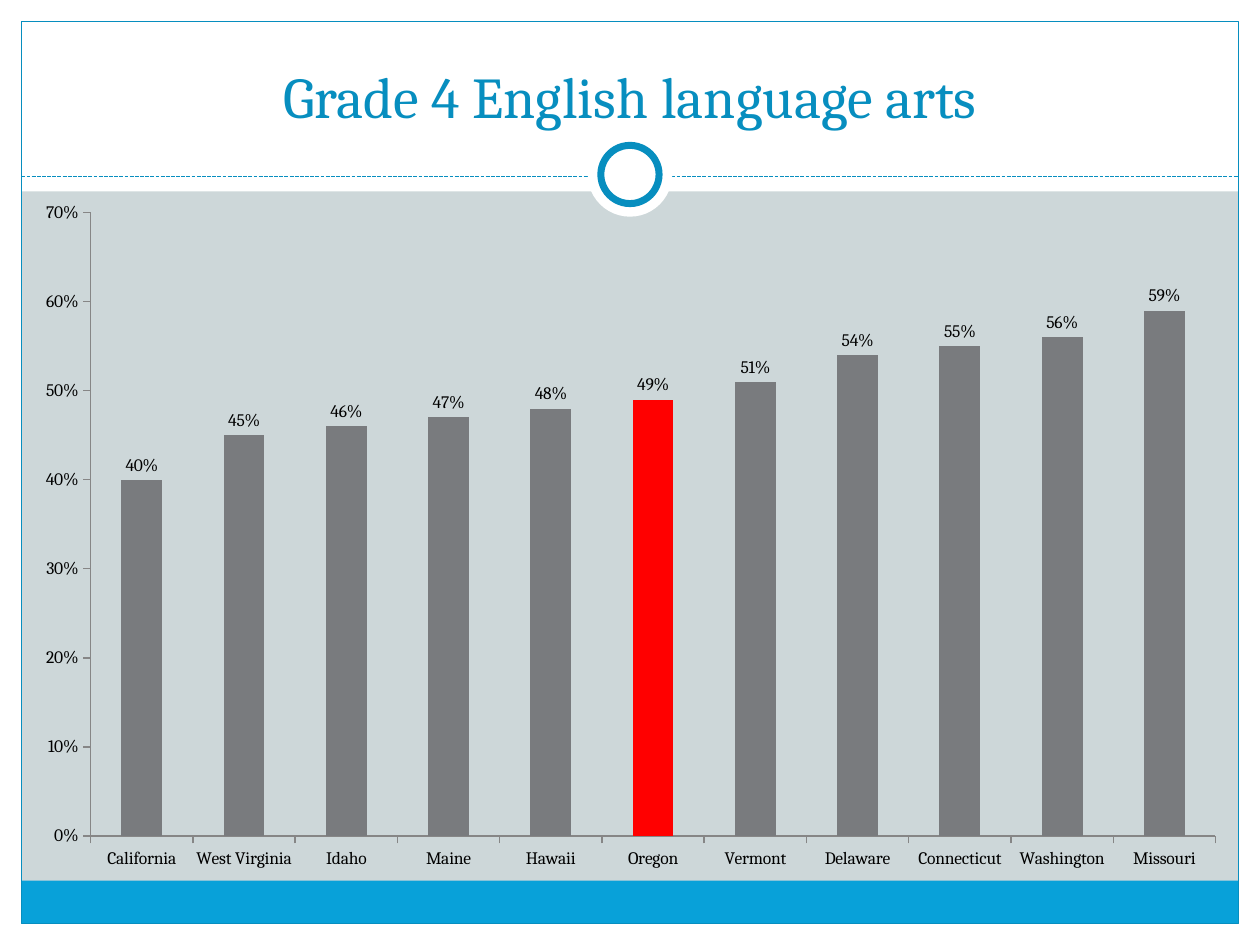
from lxml import etree
from pptx import Presentation
from pptx import util as u
from pptx.chart.data import CategoryChartData
from pptx.dml.color import RGBColor
from pptx.enum import chart as ch, dml, shapes, text
from pptx.oxml.ns import qn

COLORS = {"paper": "CDD7D9", "white": "FFFFFF", "band": "08A1D9", "accent": "078EBF",
          "bar": "797B7E", "focus": "FF0000", "ink": "000000", "axis": "868686"}
FONT = "Cambria"
W, H = u.Inches(10), u.Inches(7.5)
MARGIN = u.Inches(0.17)
HEADER = u.Inches(1.52)
RULE_Y = u.Inches(1.4)
SCORES = {"California": 0.40, "West Virginia": 0.45, "Idaho": 0.46, "Maine": 0.47,
          "Hawaii": 0.48, "Oregon": 0.49, "Vermont": 0.51, "Delaware": 0.54,
          "Connecticut": 0.55, "Washington": 0.56, "Missouri": 0.59}


def rgb(name):
    """Return the named colour."""
    return RGBColor.from_string(COLORS[name])


def set_font(font, size, color):
    """Apply the slide's typeface with a size and colour."""
    for key, value in {"name": FONT, "size": u.Pt(size), "bold": False}.items():
        setattr(font, key, value)
    font.color.rgb = rgb(color)


def add_shape(s, kind, box, fill=None, line=None, width=0.75):
    """Add a flat shape in the given box."""
    sp = s.shapes.add_shape(kind, *map(int, box))
    sp.shadow.inherit = False
    if fill:
        sp.fill.solid()
        sp.fill.fore_color.rgb = rgb(fill)
    else:
        sp.fill.background()
    if line:
        sp.line.color.rgb = rgb(line)
        sp.line.width = u.Pt(width)
    else:
        sp.line.fill.background()
    return sp


def add_frame(s, box):
    """Draw the white margins, bottom band and thin border."""
    x, y, w, h = box
    rect = shapes.MSO_SHAPE.RECTANGLE
    inner = w - 2 * MARGIN
    bottom = y + h - MARGIN
    band = 2 * MARGIN
    for part in [(x, bottom, w, MARGIN), (x, y, w, HEADER),
                 (x, y, MARGIN, h), (x + w - MARGIN, y, MARGIN, h)]:
        add_shape(s, rect, part, "white")
    add_shape(s, rect, (x + MARGIN, bottom - band, inner, band), "band")
    add_shape(s, rect, (x + MARGIN, y + MARGIN, inner, h - 2 * MARGIN), line="accent")


def add_divider(s, box):
    """Draw the dashed rule with a ring at its middle."""
    x, y, w, h = box
    rule = s.shapes.add_connector(shapes.MSO_CONNECTOR.STRAIGHT, x, RULE_Y, x + w, RULE_Y)
    rule.line.color.rgb = rgb("accent")
    rule.line.width = u.Pt(0.75)
    rule.line.dash_style = dml.MSO_LINE.SQUARE_DOT
    etree.SubElement(rule._element.spPr, qn("a:effectLst"))
    for size, line in [(h, None), (h * 0.69, "accent")]:
        ring = (x + (w - size) / 2, y + (h - size) / 2, size, size)
        add_shape(s, shapes.MSO_SHAPE.OVAL, ring, "white", line, 4)


def add_title(s, box, words):
    """Place the title in front of the header."""
    sp = s.shapes.title
    s.shapes._spTree.append(sp._element)
    for key, value in zip(("left", "top", "width", "height"), box):
        setattr(sp, key, int(value))
    tf = sp.text_frame
    tf.text = words
    for key, value in {"vertical_anchor": text.MSO_ANCHOR.BOTTOM, "word_wrap": True,
                       "auto_size": text.MSO_AUTO_SIZE.NONE}.items():
        setattr(tf, key, value)
    p = tf.paragraphs[0]
    p.alignment = text.PP_ALIGN.CENTER
    set_font(p.runs[0].font, 33, "accent")


def add_scores(s, box, focus):
    """Chart the scores by state with one state in focus."""
    data = CategoryChartData(number_format="0%")
    data.categories = list(SCORES)
    data.add_series("Series 1", list(SCORES.values()))
    kind = ch.XL_CHART_TYPE.COLUMN_CLUSTERED
    chart = s.shapes.add_chart(kind, *map(int, box), data).chart
    chart.has_legend = chart.has_title = False
    set_font(chart.font, 10, "ink")
    for axis, fmt in [(chart.category_axis, "General"), (chart.value_axis, "0%")]:
        axis.has_major_gridlines = False
        axis.major_tick_mark = ch.XL_TICK_MARK.OUTSIDE
        axis.format.line.color.rgb = rgb("axis")
        axis.tick_labels.number_format = fmt
        axis.tick_labels.number_format_is_linked = False
        set_font(axis.tick_labels.font, 10, "ink")
    for key, value in {"minimum_scale": 0, "maximum_scale": 0.7, "major_unit": 0.1}.items():
        setattr(chart.value_axis, key, value)
    plot = chart.plots[0]
    plot.gap_width = 150
    plot.vary_by_categories = False
    series = plot.series[0]
    point = series.points[list(SCORES).index(focus)]
    for part, color in [(series, "bar"), (point, "focus")]:
        part.format.fill.solid()
        part.format.fill.fore_color.rgb = rgb(color)
    labels = series.data_labels
    for key, value in {"show_value": True, "number_format": "0%",
                       "number_format_is_linked": False,
                       "position": ch.XL_LABEL_POSITION.OUTSIDE_END}.items():
        setattr(labels, key, value)
    set_font(labels.font, 10, "ink")


def main():
    """Build and save the slide."""
    prs = Presentation()
    prs.slide_width, prs.slide_height = W, H
    s = prs.slides.add_slide(prs.slide_layouts[5])
    s.background.fill.solid()
    s.background.fill.fore_color.rgb = rgb("paper")
    add_frame(s, (0, 0, W, H))
    add_divider(s, (MARGIN, H * 0.14, W - 2 * MARGIN, W * 0.067))
    add_title(s, (W / 30, H / 30, W * 14 / 15, H / 9), "Grade 4 English language arts")
    add_scores(s, (MARGIN, H * 0.2, W * 0.967, H * 11 / 15), "Oregon")
    prs.save("out.pptx")


if __name__ == "__main__":
    main()
